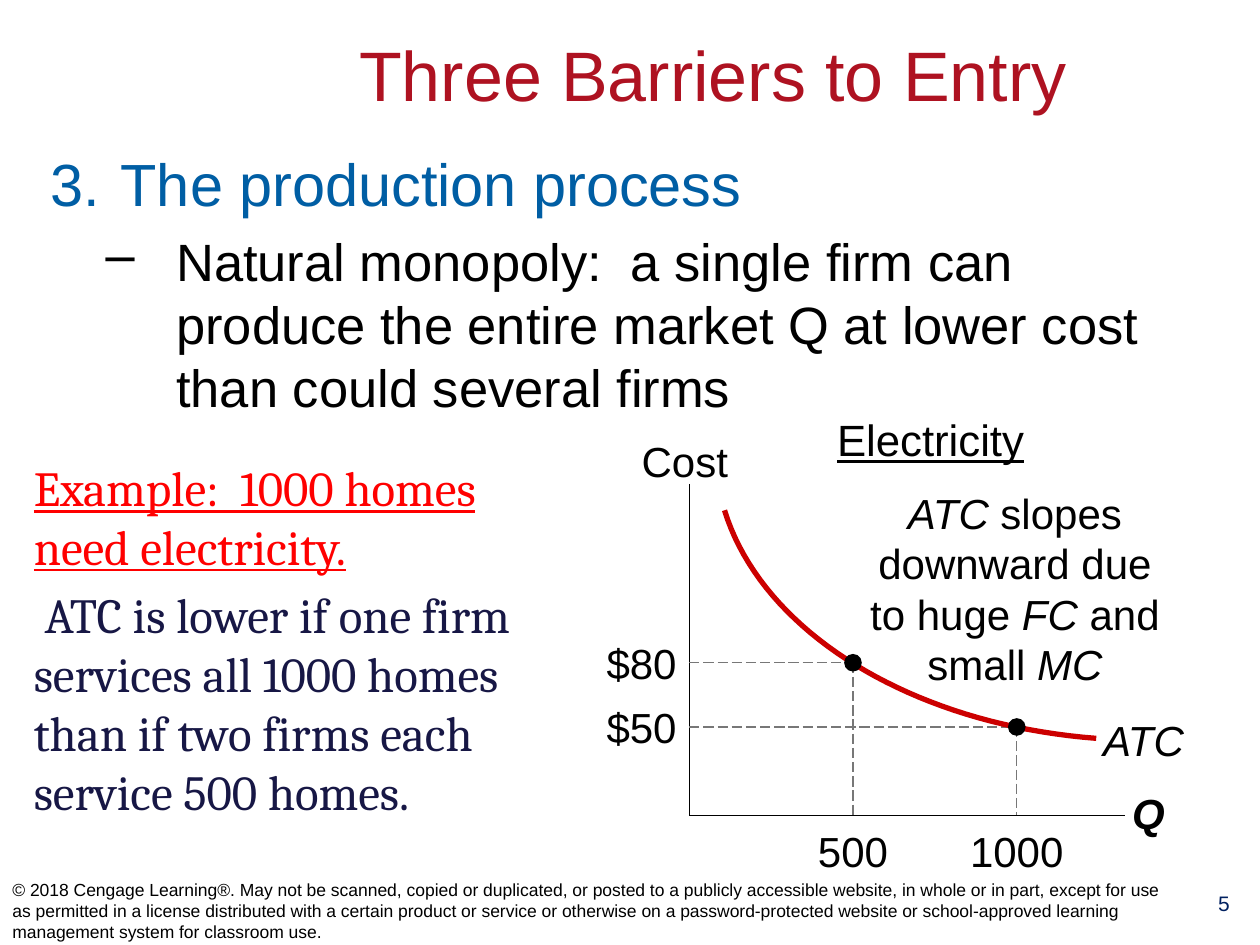
"""Builds the natural monopoly slide on a grid of 100 columns by 75 rows."""
from lxml import etree
from pptx import Presentation
from pptx.dml.color import RGBColor
from pptx.enum.dml import MSO_LINE
from pptx.enum.shapes import MSO_CONNECTOR, MSO_SHAPE
from pptx.enum.text import MSO_ANCHOR, MSO_AUTO_SIZE, PP_ALIGN
from pptx.oxml.ns import qn
from pptx.util import Inches, Pt

THEME = {
    "red": "AE1221", "blue": "005EA4", "black": "000000", "page": "002060",
    "example": "FF0000", "navy": "171745", "curve": "CC0000", "guide": "777777",
    "title": 40, "heading": 34, "point": 30, "body": 28, "subtitle": 25,
    "label": 24, "number": 12, "notice": 10, "sans": "Arial", "serif": "Cambria",
}
COLUMNS, ROWS = 100, 75

deck = Presentation()
deck.slide_width, deck.slide_height = Inches(10), Inches(7.5)
column, row = deck.slide_width / COLUMNS, deck.slide_height / ROWS
slide = deck.slides.add_slide(deck.slide_layouts[5])


def write(paragraph, text, size, color, font="sans", **styles):
    run = paragraph.add_run()
    run.text = text
    run.font.size, run.font.name = Pt(THEME[size]), THEME[font]
    run.font.color.rgb = RGBColor.from_string(THEME[color])
    for style, value in styles.items():
        setattr(run.font, style, value)


def text_frame(left, top, width, height, **settings):
    box = slide.shapes.add_textbox(
        round(left * column), round(top * row), round(width * column), round(height * row))
    for setting, value in {"word_wrap": True, **settings}.items():
        setattr(box.text_frame, setting, value)
    return box.text_frame


title = slide.shapes.title
title.left, title.top = round(14.7 * column), round(1.1 * row)
title.width, title.height = round(85.3 * column), round(9.4 * row)
for setting, value in {"word_wrap": False, "auto_size": MSO_AUTO_SIZE.NONE,
                       "vertical_anchor": MSO_ANCHOR.MIDDLE}.items():
    setattr(title.text_frame, setting, value)
heading = title.text_frame.paragraphs[0]
heading.alignment = PP_ALIGN.CENTER
write(heading, "Three Barriers to Entry ", "title", "red")

barrier = text_frame(3, 11.2, 94.5, 26.9)
barrier_points = [
    ("The production process", "heading", "blue", 5.6, 0,
     "a:buAutoNum", {"type": "arabicPeriod", "startAt": "3"}),
    ("Natural monopoly:  a single firm can produce the entire market Q at lower cost "
     "than could several firms", "point", "black", 10, 1, "a:buChar", {"char": "–"}),
]
for text, size, color, indent, level, bullet, marks in barrier_points:
    point = barrier.add_paragraph() if level else barrier.paragraphs[0]
    point.level = level
    properties = point._p.get_or_add_pPr()
    properties.set("marL", str(round(indent * column)))
    properties.set("indent", str(round(-5.6 * column)))
    if level:
        point.space_before = Pt(0.2 * THEME[size])
    etree.SubElement(properties, qn(bullet), marks)
    write(point, text, size, color)

example = text_frame(1.7, 35.8, 44.7, 31.7)
write(example.paragraphs[0], "Example:  1000 homes need electricity.",
      "body", "example", "serif", underline=True)
outcome = example.add_paragraph()
outcome.space_before = Pt(0.2 * THEME["body"])
write(outcome, " ATC is lower if one firm services all 1000 homes than if two firms each "
      "service 500 homes.", "body", "navy", "serif")

page = text_frame(94.3, 70.2, 5.7, 4.1).paragraphs[0]
page.alignment = PP_ALIGN.CENTER
write(page, "5", "number", "page")
notice = text_frame(0, 69.6, 94.1, 5.4, vertical_anchor=MSO_ANCHOR.MIDDLE)
write(notice.paragraphs[0],
      "© 2018 Cengage Learning®. May not be scanned, copied or duplicated, or posted to a "
      "publicly accessible website, in whole or in part, except for use as permitted in a "
      "license distributed with a certain product or service or otherwise on a "
      "password-protected website or school-approved learning management system for "
      "classroom use.", "notice", "black")

cost_axis, quantity_axis = 54.7, 64.7
outputs = [(67.7, 52.6, "$80", "500"), (80.7, 57.7, "$50", "1000")]
rules = [(cost_axis, 38.4, cost_axis, quantity_axis, "black"),
         (cost_axis, quantity_axis, 89.3, quantity_axis, "black")]
for quantity, cost, _, _ in outputs:
    rules += [(cost_axis, cost, quantity, cost, "guide"),
              (quantity, cost, quantity, quantity_axis, "guide")]
for x1, y1, x2, y2, color in rules:
    rule = slide.shapes.add_connector(
        MSO_CONNECTOR.STRAIGHT, round(x1 * column), round(y1 * row),
        round(x2 * column), round(y2 * row))
    rule.line.width = Pt(0.75)
    rule.line.color.rgb = RGBColor.from_string(THEME[color])
    if color == "guide":
        rule.line.dash_style = MSO_LINE.LONG_DASH
    etree.SubElement(rule._element.spPr, qn("a:effectLst"))

bends = [(87, 58.6), (72.4, 57.5), (60.5, 50.2), (57.5, 40.5)]
steps = 40
curve_points = []
for step in range(steps + 1):
    t = step / steps
    weights = [(1 - t) ** 3, 3 * t * (1 - t) ** 2, 3 * t ** 2 * (1 - t), t ** 3]
    curve_points.append((sum(w * x for w, (x, _) in zip(weights, bends)) * column,
                         sum(w * y for w, (_, y) in zip(weights, bends)) * row))
outline = slide.shapes.build_freeform(*map(round, curve_points[0]))
outline.add_line_segments([(round(x), round(y)) for x, y in curve_points[1:]], close=False)
cost_curve = outline.convert_to_shape()
cost_curve.shadow.inherit = False
cost_curve.fill.background()
cost_curve.line.width = Pt(3)
cost_curve.line.color.rgb = RGBColor.from_string(THEME["curve"])

dot = 1.4
for quantity, cost, price, homes in outputs:
    marker = slide.shapes.add_shape(
        MSO_SHAPE.OVAL, round((quantity - dot / 2) * column), round((cost - dot / 2) * row),
        round(dot * column), round(dot * row))
    marker.shadow.inherit = False
    marker.fill.solid()
    marker.fill.fore_color.rgb = RGBColor.from_string(THEME["black"])
    marker.line.fill.background()
    price_label = text_frame(46.3, cost - 2, 7.4, 4, margin_left=0, margin_right=0,
                             margin_top=0, margin_bottom=0).paragraphs[0]
    price_label.alignment = PP_ALIGN.RIGHT
    write(price_label, price, "label", "black")
    homes_label = text_frame(quantity - 4.8, 65, 9.6, 5).paragraphs[0]
    homes_label.alignment = PP_ALIGN.CENTER
    write(homes_label, homes, "label", "black")

captions = [
    ((49.6, 34.1, 9.5, 5), "label", [("Cost", {})]),
    ((88.7, 62, 4.9, 5), "label", [("Q", {"bold": True, "italic": True})]),
    ((85.7, 56.2, 10.1, 5), "label", [("ATC", {"italic": True})]),
    ((61.4, 32.3, 24.9, 5.2), "subtitle", [("Electricity", {"underline": True})]),
    ((68, 38.2, 25.1, 17.2), "label", [
        ("ATC", {"italic": True}), (" slopes downward due to huge ", {}),
        ("FC", {"italic": True}), (" and small ", {}), ("MC", {"italic": True})]),
]
for place, size, runs in captions:
    caption = text_frame(*place).paragraphs[0]
    caption.alignment = PP_ALIGN.CENTER
    for text, styles in runs:
        write(caption, text, size, "black", **styles)

deck.save("out.pptx")
